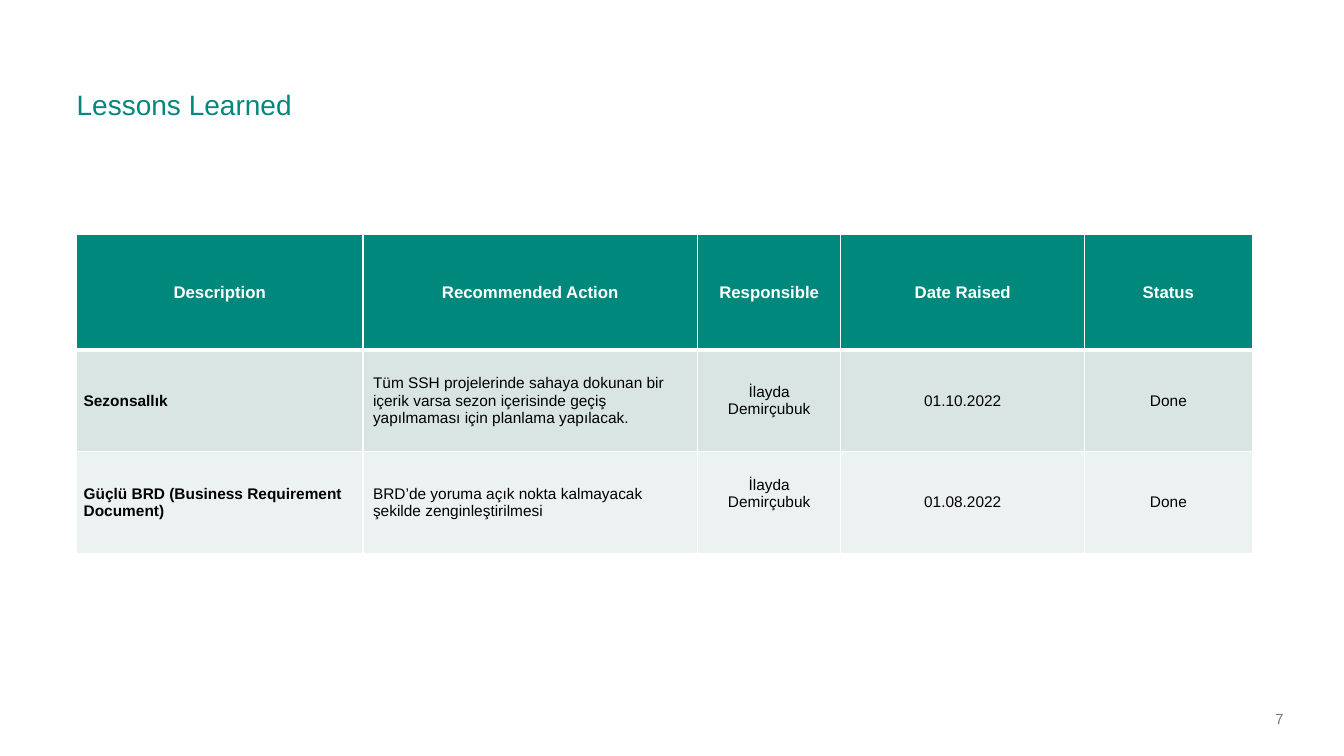
from dataclasses import dataclass

from lxml.etree import SubElement
from pptx import Presentation
from pptx.dml.color import RGBColor
from pptx.enum.text import MSO_ANCHOR, PP_ALIGN
from pptx.oxml.ns import qn
from pptx.slide import Slide
from pptx.table import _Cell
from pptx.text.text import _Paragraph
from pptx.util import Inches, Pt


@dataclass(frozen=True)
class Theme:
    font: str = "Arial"
    teal: str = "00887D"
    bands: tuple[str, str] = ("D8E5E3", "ECF2F1")
    white: str = "FFFFFF"
    black: str = "000000"
    gray: str = "777777"
    title_size: float = 20
    header_size: float = 12
    body_size: float = 11
    number_size: float = 10.5
    border: float = 1
    header_border: float = 3


@dataclass(frozen=True)
class Label:
    text: str
    left: float
    top: float
    width: float
    height: float
    size: float
    color: str
    anchor: MSO_ANCHOR
    line_spacing: float = 1.0


@dataclass(frozen=True)
class Column:
    heading: str
    width: float
    align: PP_ALIGN = PP_ALIGN.CENTER
    bold: bool = False
    inset: float = 0.1


@dataclass(frozen=True)
class Lesson:
    values: tuple[str, ...]
    responsible_bottom: float = 0.05


THEME = Theme()
LABELS = [
    Label("Lessons Learned", 0.76, 0.77, 11.89, 0.44,
          THEME.title_size, THEME.teal, MSO_ANCHOR.BOTTOM, 0.9),
    Label("7", 12.65, 6.93, 0.64, 0.4,
          THEME.number_size, THEME.gray, MSO_ANCHOR.MIDDLE),
]
COLUMNS = [
    Column("Description", 2.84, PP_ALIGN.LEFT, True, 0.07),
    Column("Recommended Action", 3.32, PP_ALIGN.LEFT),
    Column("Responsible", 1.42),
    Column("Date Raised", 2.42),
    Column("Status", 1.66),
]
LESSONS = [
    Lesson(("Sezonsallık",
            "Tüm SSH projelerinde sahaya dokunan bir içerik varsa sezon "
            "içerisinde geçiş yapılmaması için planlama yapılacak.",
            "İlayda Demirçubuk", "01.10.2022", "Done")),
    Lesson(("Güçlü BRD (Business Requirement Document)",
            "BRD’de yoruma açık nokta kalmayacak şekilde zenginleştirilmesi",
            "İlayda Demirçubuk", "01.08.2022", "Done"), 0.22),
]
HEADER_HEIGHT, ROW_HEIGHT = 1.14, 1.01


def style_paragraph(p: _Paragraph, size: float, color: str, bold: bool = False) -> None:
    p.font.name = THEME.font
    p.font.size = Pt(size)
    p.font.bold = bold
    p.font.color.rgb = RGBColor.from_string(color)


def add_label(slide: Slide, label: Label) -> None:
    box = slide.shapes.add_textbox(Inches(label.left), Inches(label.top),
                                   Inches(label.width), Inches(label.height))
    tf = box.text_frame
    tf.word_wrap = True
    tf.vertical_anchor = label.anchor
    tf.margin_left = tf.margin_right = tf.margin_top = tf.margin_bottom = 0
    tf.text = label.text
    p = tf.paragraphs[0]
    p.line_spacing = label.line_spacing
    style_paragraph(p, label.size, label.color)


def set_borders(cell: _Cell, top: float, bottom: float) -> None:
    """Draw white cell edges; must run before the cell is filled."""
    tc_pr = cell._tc.get_or_add_tcPr()
    edges = {"lnL": THEME.border, "lnR": THEME.border, "lnT": top, "lnB": bottom}
    for tag, width in edges.items():
        ln = SubElement(tc_pr, qn(f"a:{tag}"), w=str(Pt(width)))
        SubElement(SubElement(ln, qn("a:solidFill")), qn("a:srgbClr"), val=THEME.white)


def fill_cell(cell: _Cell, text: str, fill: str, align: PP_ALIGN, inset: float) -> _Paragraph:
    cell.fill.solid()
    cell.fill.fore_color.rgb = RGBColor.from_string(fill)
    cell.vertical_anchor = MSO_ANCHOR.MIDDLE
    cell.margin_left = cell.margin_right = Inches(inset)
    cell.text = text
    p = cell.text_frame.paragraphs[0]
    p.alignment = align
    return p


def add_lessons_table(slide: Slide) -> None:
    width = sum(column.width for column in COLUMNS)
    height = HEADER_HEIGHT + ROW_HEIGHT * len(LESSONS)
    table = slide.shapes.add_table(len(LESSONS) + 1, len(COLUMNS), Inches(0.76),
                                   Inches(2.33), Inches(width), Inches(height)).table
    table.horz_banding = False
    for i, row in enumerate(table.rows):
        row.height = Inches(ROW_HEIGHT if i else HEADER_HEIGHT)

    for c, column in enumerate(COLUMNS):
        table.columns[c].width = Inches(column.width)
        cell = table.cell(0, c)
        set_borders(cell, THEME.border, THEME.header_border)
        p = fill_cell(cell, column.heading, THEME.teal, PP_ALIGN.CENTER, 0.07)
        cell.margin_top = cell.margin_bottom = 0
        p.line_spacing = 1.07
        style_paragraph(p, THEME.header_size, THEME.white, True)

        for r, lesson in enumerate(LESSONS, start=1):
            cell = table.cell(r, c)
            set_borders(cell, THEME.header_border if r == 1 else THEME.border, THEME.border)
            fill = THEME.bands[(r - 1) % len(THEME.bands)]
            p = fill_cell(cell, lesson.values[c], fill, column.align, column.inset)
            style_paragraph(p, THEME.body_size, THEME.black, column.bold)
            if column.heading == "Responsible":
                cell.margin_bottom = Inches(lesson.responsible_bottom)


def main() -> None:
    prs = Presentation()
    prs.slide_width, prs.slide_height = Inches(13.33), Inches(7.5)
    slide = prs.slides.add_slide(prs.slide_layouts[6])
    add_lessons_table(slide)
    for label in LABELS:
        add_label(slide, label)
    prs.save("out.pptx")


if __name__ == "__main__":
    main()
